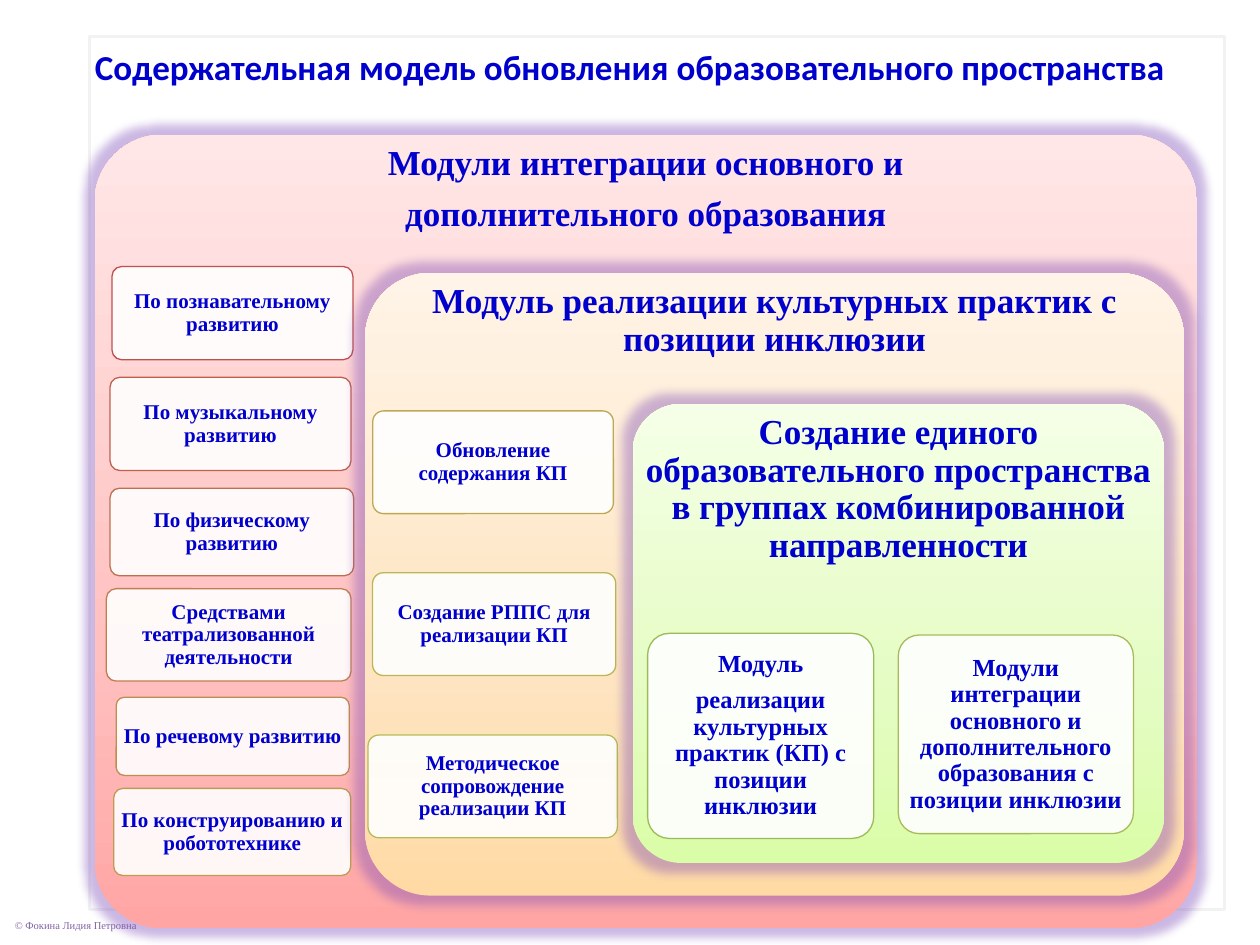
"""Builds a slide with three nested panels of education modules."""
from copy import deepcopy

from lxml import etree
from pptx import Presentation
from pptx.dml.color import RGBColor
from pptx.enum.shapes import MSO_SHAPE
from pptx.enum.text import MSO_ANCHOR, PP_ALIGN
from pptx.oxml.ns import qn
from pptx.util import Pt

RECT, ROUND = MSO_SHAPE.RECTANGLE, MSO_SHAPE.ROUNDED_RECTANGLE
TOP, MIDDLE = MSO_ANCHOR.TOP, MSO_ANCHOR.MIDDLE
CENTER, LEFT = PP_ALIGN.CENTER, PP_ALIGN.LEFT
SERIF, SANS = "Times New Roman", "Calibri"
COLORS = {"text": "0000CC", "white": "FFFFFF", "frame": "F2F2F2", "purple": "8064A2"}
CARD_ADJ, CORNER = 0.105, 0.29

TITLE = "Содержательная модель обновления образовательного пространства"
FOOTER = "© Фокина Лидия Петровна"
PANELS = [
    {"box": (54, 77, 630, 453.6), "adj": 0.085,
     "stops": ("FFA6A5", "FFC0BF", "FFE7E7"),
     "text": ["Модули интеграции основного и", "дополнительного образования"],
     "size": 12, "inset": 3.6,
     "cards": [
         ((64, 152.3, 137.7, 53.3), "C0504D", ["По познавательному развитию"]),
         ((62.9, 215.6, 137.7, 53.3), "BF604E", ["По музыкальному развитию"]),
         ((62.9, 279, 139.2, 50), "BF6F4F", ["По физическому развитию"]),
         ((60.8, 336.4, 139.8, 52.8), "BE7E51", ["Средствами театрализованной деятельности"]),
         ((66.4, 398.4, 133.2, 44.7), "BE8D52", ["По речевому развитию"]),
         ((65, 450.5, 135.4, 49.8), "BD9B53", ["По конструированию и робототехнике"]),
     ]},
    {"box": (208.6, 156, 468, 355.8), "adj": CARD_ADJ,
     "stops": ("FFDAA5", "FEE4C0", "FFF4E7"),
     "text": ["Модуль реализации культурных практик с позиции инклюзии"],
     "size": 12, "inset": 3.6,
     "cards": [
         ((213, 234.8, 137.5, 58.7), "BDA954", ["Обновление содержания КП"]),
         ((212.9, 327.3, 139, 58.7), "BCB655", ["Создание РППС для реализации КП"]),
         ((210.3, 420, 142.5, 58.7), "B5BC57", ["Методическое сопровождение реализации КП"]),
     ]},
    {"box": (361.5, 230.9, 303.8, 262.2), "adj": CARD_ADJ,
     "stops": ("DAFDA7", "E4FCC2", "F5FFE7"),
     "text": ["Создание единого образовательного пространства "
              "в группах комбинированной направленности"],
     "size": 14, "inset": 4.3,
     "cards": [
         ((513.3, 362.9, 134.4, 113.5), "A8BB58",
          ["Модули интеграции основного и дополнительного образования с позиции инклюзии"]),
         ((370.1, 361.9, 129.2, 117.2), "9BBB59",
          ["Модуль", "реализации культурных практик (КП) с позиции инклюзии"]),
     ]},
]


def rgb(value):
    return RGBColor.from_string(value)


def set_text(s, lines, size, margin, anchor=TOP, font=SERIF, color="text",
             bold=True, align=CENTER, wrap=True, spaced=True):
    tf = s.text_frame
    tf.word_wrap, tf.vertical_anchor = wrap, anchor
    tf.margin_left = tf.margin_right = tf.margin_top = tf.margin_bottom = Pt(margin)
    for i, line in enumerate(lines):
        p = tf.add_paragraph() if i else tf.paragraphs[0]
        p.add_run().text = line
        p.alignment = align
        if spaced:
            p.line_spacing, p.space_after = 0.9, Pt(size * 0.4)
        p.font.size, p.font.name, p.font.bold = Pt(size), font, bold
        p.font.color.rgb = rgb(COLORS[color])


def add_box(shapes, kind, box, line=None, width=0.75, alpha=None, adj=None):
    s = shapes.add_shape(kind, *map(Pt, box))
    s.shadow.inherit = False
    if adj:
        s.adjustments[0] = adj
    if line:
        s.line.color.rgb, s.line.width = rgb(line), Pt(width)
    else:
        s.line.fill.background()
    if alpha:
        s.fill.solid()
        s.fill.fore_color.rgb = rgb(COLORS["white"])
        color = s._element.spPr.find(qn("a:solidFill"))[0]
        etree.SubElement(color, qn("a:alpha"), val=str(alpha * 1000))
    return s


def add_textbox(shapes, box, lines, size, margin, **style):
    s = shapes.add_textbox(*map(Pt, box))
    set_text(s, lines, size, margin, **style)


def add_panel(shapes, panel):
    s = add_box(shapes, ROUND, panel["box"], adj=panel["adj"])
    s.fill.gradient()
    s.fill.gradient_angle = 90
    stop_list = s._element.spPr.find(qn("a:gradFill")).find(qn("a:gsLst"))
    stop_list.insert(1, deepcopy(stop_list[0]))
    for stop, position, color in zip(s.fill.gradient_stops, (0, 0.35, 1), panel["stops"]):
        stop.position, stop.color.rgb = position, rgb(color)
    effects = s._element.spPr.find(qn("a:effectLst"))
    glow = etree.SubElement(effects, qn("a:glow"), rad=str(Pt(11)))
    color = etree.SubElement(glow, qn("a:srgbClr"), val=COLORS["purple"])
    etree.SubElement(color, qn("a:satMod"), val="175000")
    etree.SubElement(color, qn("a:alpha"), val="40000")
    add_textbox(shapes, panel["box"], panel["text"], 20, 5.76)
    for box, line, text in panel["cards"]:
        card = add_box(shapes, ROUND, box, line, alpha=90, adj=CARD_ADJ)
        margin = panel["inset"] - CORNER * CARD_ADJ * min(box[2:])
        set_text(card, text, panel["size"], margin, anchor=MIDDLE)


def main():
    prs = Presentation()
    prs.slide_width, prs.slide_height = Pt(720), Pt(540)
    shapes = prs.slides.add_slide(prs.slide_layouts[6]).shapes
    add_box(shapes, RECT, (51.1, 20.9, 648.7, 499), COLORS["frame"], 2, 70)
    add_textbox(shapes, (1.4, 521.3, 86.4, 14.4), [FOOTER], 6, 7.2, anchor=MIDDLE,
                color="purple", bold=False, align=LEFT, wrap=False, spaced=False)
    add_textbox(shapes, (36, 21.6, 648, 38.9), [TITLE], 20, 4.5, font=SANS, spaced=False)
    for panel in PANELS:
        add_panel(shapes, panel)
    prs.save("out.pptx")


if __name__ == "__main__":
    main()
